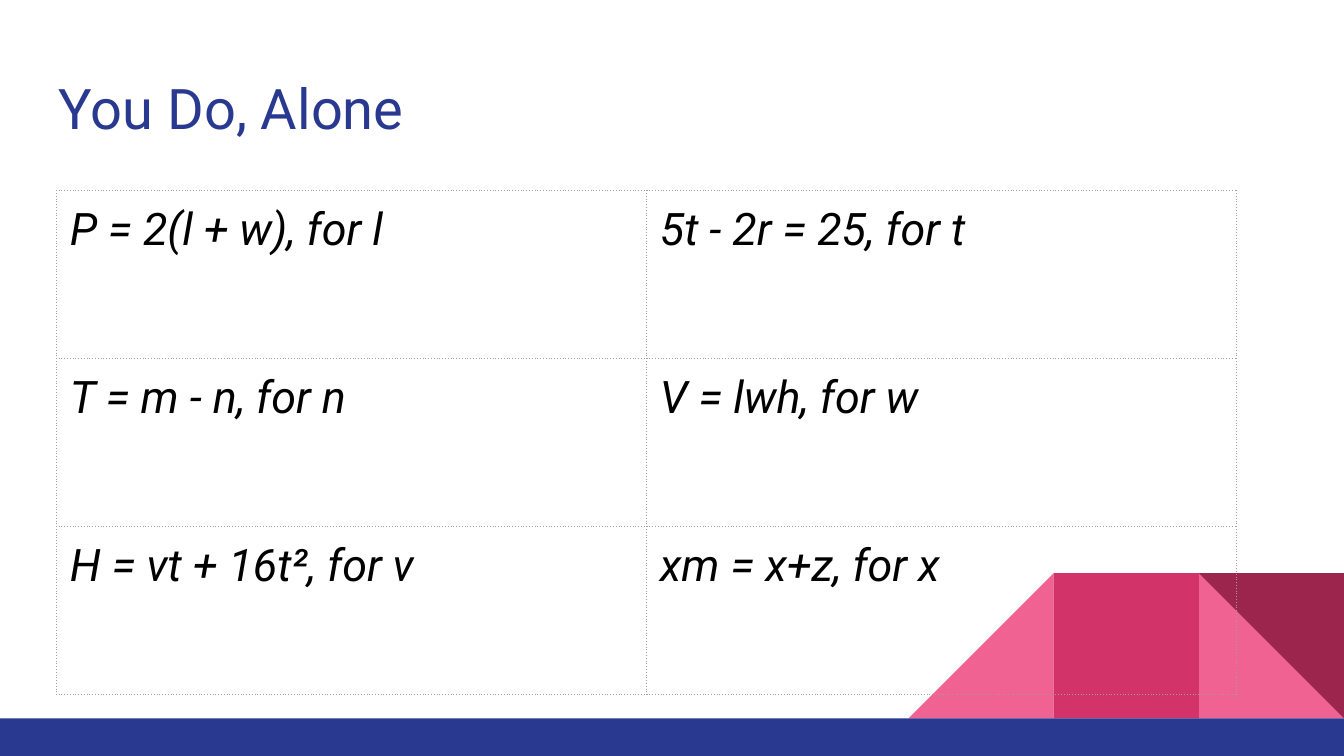
from lxml.etree import SubElement
from pptx import Presentation
from pptx.dml.color import RGBColor
from pptx.enum.shapes import MSO_SHAPE
from pptx.oxml.ns import qn
from pptx.util import Inches, Pt

NAVY = RGBColor(0x2A, 0x39, 0x90)
PINK = RGBColor(0xF0, 0x62, 0x92)
ROSE = RGBColor(0xD2, 0x33, 0x69)
WINE = RGBColor(0x9C, 0x25, 0x4D)
BLACK = RGBColor(0, 0, 0)
GRAY = RGBColor(0x9E, 0x9E, 0x9E)


def write_text(frame, text, size, color, italic=False):
    span = frame.paragraphs[0].add_run()
    span.text = text
    span.font.name = "Roboto"
    span.font.size = Pt(size)
    span.font.italic = italic
    span.font.color.rgb = color


def set_borders(cell, color, width):
    properties = cell._tc.get_or_add_tcPr()
    for position, side in enumerate(("lnL", "lnR", "lnT", "lnB")):
        line = SubElement(properties, qn(f"a:{side}"), w=str(Pt(width)))
        fill = SubElement(line, qn("a:solidFill"))
        SubElement(fill, qn("a:srgbClr"), val=str(color))
        SubElement(line, qn("a:prstDash"), val="dot")
        properties.insert(position, line)


deck = Presentation()
deck.slide_width = Inches(10)
deck.slide_height = Inches(5.625)
page = deck.slides.add_slide(deck.slide_layouts[6])

tile = Inches(1.08)
bar_height = Inches(0.28)
bar_top = deck.slide_height - bar_height
tile_top = bar_top - tile

decorations = [
    (MSO_SHAPE.RIGHT_TRIANGLE, 1, 0, PINK),
    (MSO_SHAPE.RIGHT_TRIANGLE, 3, 270, PINK),
    (MSO_SHAPE.RECTANGLE, 2, 0, ROSE),
    (MSO_SHAPE.RIGHT_TRIANGLE, 1, 180, WINE),
    (MSO_SHAPE.RECTANGLE, None, 0, NAVY),
]
for kind, tiles_from_right, rotation, color in decorations:
    if tiles_from_right is None:
        bounds = (0, bar_top, deck.slide_width, bar_height)
    else:
        bounds = (deck.slide_width - tiles_from_right * tile, tile_top, tile, tile)
    shape = page.shapes.add_shape(kind, *bounds)
    shape.rotation = rotation
    shape.shadow.inherit = False
    shape.fill.solid()
    shape.fill.fore_color.rgb = color
    shape.line.fill.background()

margin = Inches(0.1)
title_left = Inches(0.34)
title_box = page.shapes.add_textbox(
    title_left, Inches(0.45), deck.slide_width - 2 * title_left, Inches(0.66))
title_frame = title_box.text_frame
title_frame.word_wrap = True
title_frame.margin_left = title_frame.margin_right = margin
title_frame.margin_top = title_frame.margin_bottom = margin
write_text(title_frame, "You Do, Alone", size=30, color=NAVY)

exercises = [
    ("P = 2(l + w), for l", "5t - 2r = 25, for t"),
    ("T = m - n, for n", "V = lwh, for w"),
    ("H = vt + 16t², for v", "xm = x+z, for x"),
]
column_width = Inches(4.39)
row_height = Inches(1.25)
table = page.shapes.add_table(
    len(exercises), 2, Inches(0.42), Inches(1.42),
    2 * column_width, len(exercises) * row_height).table
table.first_row = False
table.horz_banding = False
for row, pair in enumerate(exercises):
    for column, exercise in enumerate(pair):
        cell = table.cell(row, column)
        cell.margin_left = cell.margin_right = margin
        cell.margin_top = cell.margin_bottom = margin
        cell.fill.background()
        set_borders(cell, GRAY, width=0.75)
        write_text(cell.text_frame, exercise, size=24, color=BLACK, italic=True)

deck.save("out.pptx")
